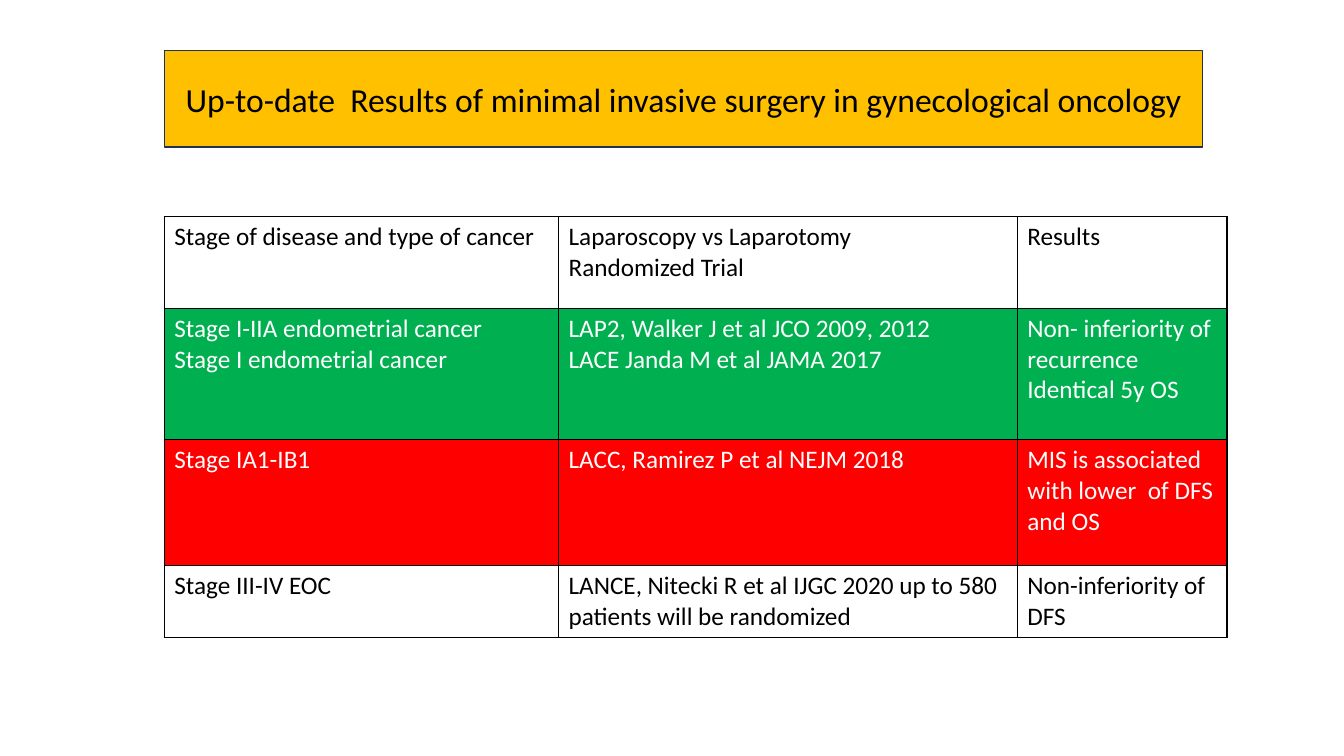
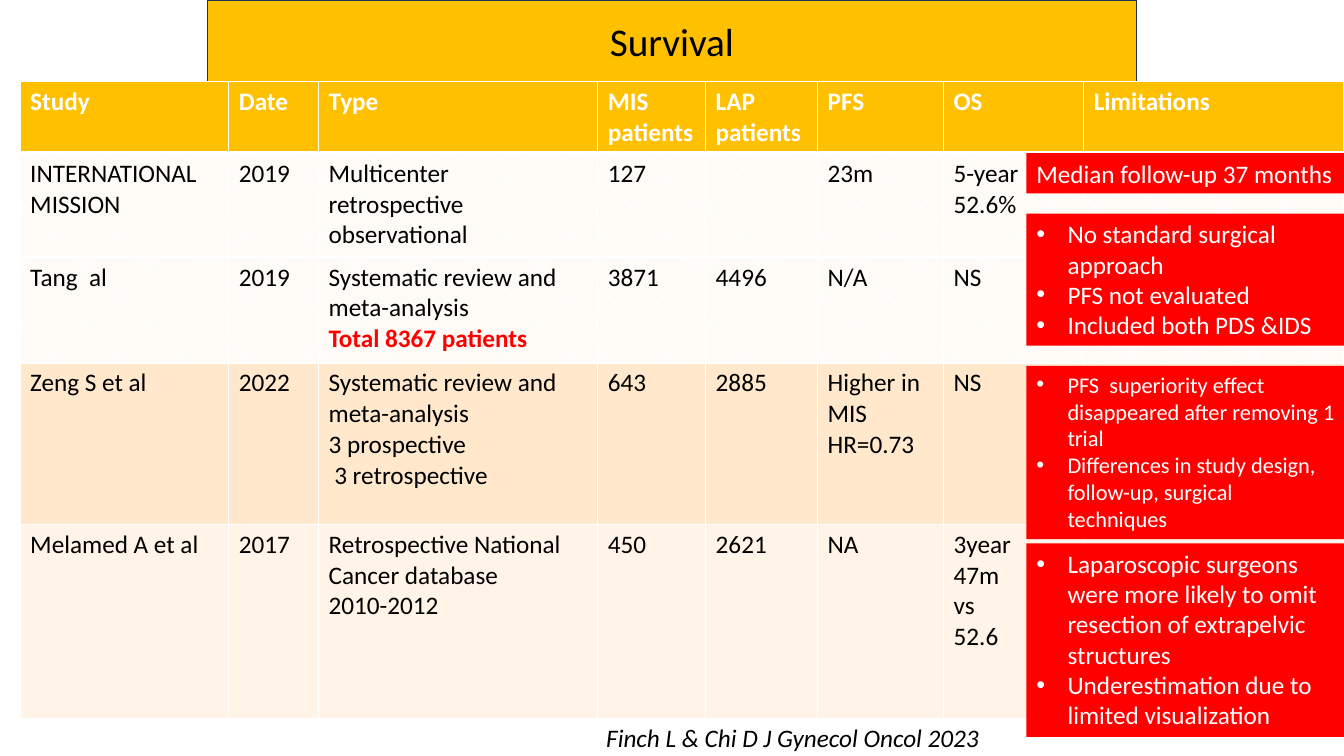
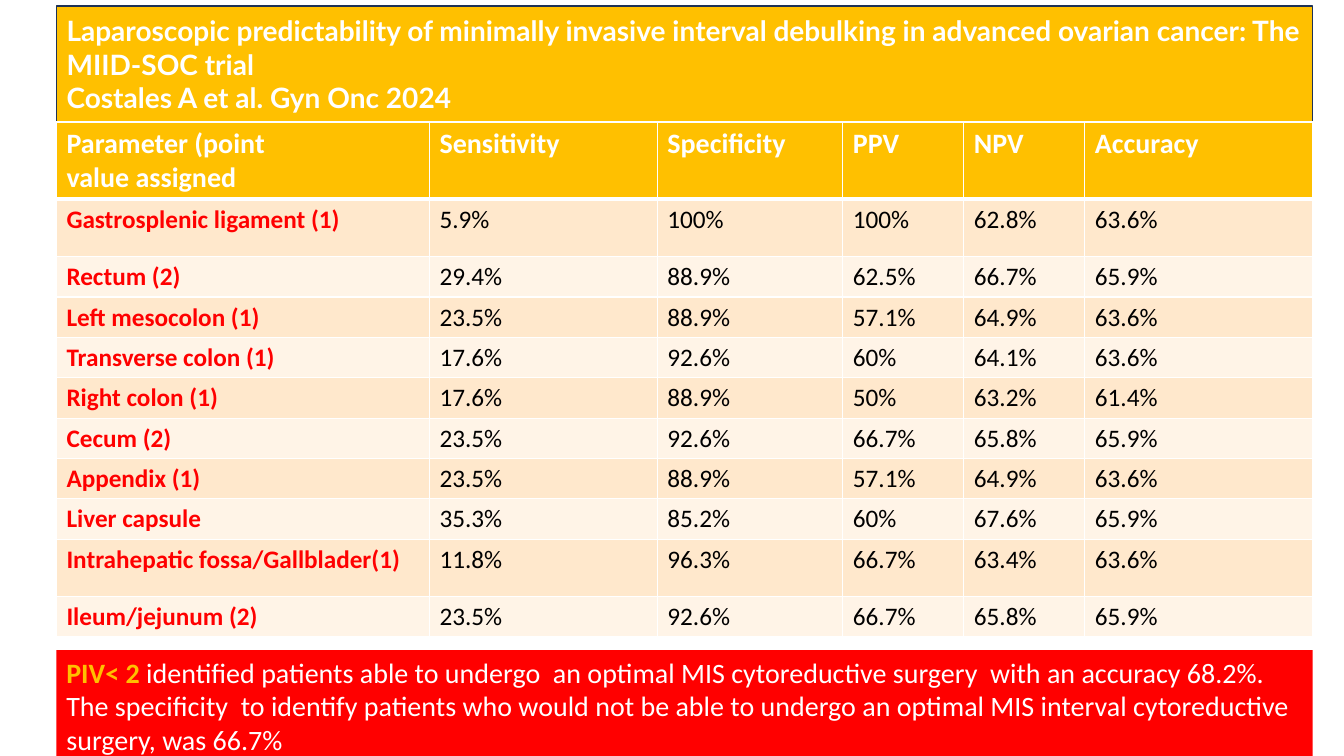
from pptx import Presentation
from pptx.dml.color import RGBColor
from pptx.enum.dml import MSO_PATTERN
from pptx.enum.text import MSO_ANCHOR, MSO_AUTO_SIZE, PP_ALIGN
from pptx.oxml.ns import qn
from pptx.util import Inches, Pt
from lxml import etree

LEFT, CENTER, RIGHT = PP_ALIGN.LEFT, PP_ALIGN.CENTER, PP_ALIGN.RIGHT
MIDDLE = MSO_ANCHOR.MIDDLE
NO_AUTOFIT = MSO_AUTO_SIZE.NONE
CHECKER = MSO_PATTERN.SMALL_CHECKER_BOARD
TITLE_ONLY = 5
FONT = "Calibri"
COLORS = {
    "black": "000000",
    "white": "FFFFFF",
    "gold": "FFC000",
    "navy": "1E3256",
    "red": "FF0000",
    "green": "00B050",
    "peach": "FFE8CC",
    "cream": "FFF4E7",
}

TRIALS = [
    ["Stage of disease and type of cancer", "Laparoscopy vs Laparotomy\nRandomized Trial", "Results"],
    ["Stage I-IIA endometrial cancer\nStage I endometrial cancer",
     "LAP2, Walker J et al JCO 2009, 2012\nLACE Janda M et al JAMA 2017",
     "Non- inferiority of recurrence\nIdentical 5y OS"],
    ["Stage IA1-IB1", "LACC, Ramirez P et al NEJM 2018", "MIS is associated with lower  of DFS and OS"],
    ["Stage III-IV EOC", "LANCE, Nitecki R et al IJGC 2020 up to 580 patients will be randomized",
     "Non-inferiority of DFS"],
]
STUDIES = [
    ["Study", "Date", "Type", "MIS\npatients", "LAP\npatients", "PFS", "OS", "Limitations"],
    ["INTERNATIONAL MISSION", "2019", "Multicenter retrospective observational",
     "127", "", "23m", "5-year 52.6%", ""],
    ["Tang  al", "2019", "Systematic review and meta-analysis\nTotal 8367 patients",
     "3871", "4496", "N/A", "NS", ""],
    ["Zeng S et al", "2022", "Systematic review and meta-analysis\n3 prospective\n 3 retrospective",
     "643", "2885", "Higher in MIS\nHR=0.73", "NS", ""],
    ["Melamed A et al", "2017", "Retrospective National Cancer database\n2010-2012",
     "450", "2621", "NA", "3year\n47m\nvs\n52.6", ""],
]
LIMITATIONS = [
    (1.52, 0.4, 18, False, ["Median follow-up 37 months"]),
    (2.12, 1.31, 18, True,
     ["No standard surgical approach", "PFS not evaluated", "Included both PDS &IDS"]),
    (3.63, 1.72, 16, True,
     ["PFS  superiority effect disappeared after removing 1 trial",
      "Differences in study design, follow-up, surgical techniques"]),
    (5.39, 1.92, 18, True,
     ["Laparoscopic surgeons were more likely to omit  resection of extrapelvic structures",
      "Underestimation due to limited visualization"]),
]
PARAMETERS = [
    ["Parameter (point\nvalue assigned", "Sensitivity", "Specificity", "PPV", "NPV", "Accuracy"],
    ["Gastrosplenic ligament (1)", "5.9%", "100%", "100%", "62.8%", "63.6%"],
    ["Rectum (2)", "29.4%", "88.9%", "62.5%", "66.7%", "65.9%"],
    ["Left mesocolon (1)", "23.5%", "88.9%", "57.1%", "64.9%", "63.6%"],
    ["Transverse colon (1)", "17.6%", "92.6%", "60%", "64.1%", "63.6%"],
    ["Right colon (1)", "17.6%", "88.9%", "50%", "63.2%", "61.4%"],
    ["Cecum (2)", "23.5%", "92.6%", "66.7%", "65.8%", "65.9%"],
    ["Appendix (1)", "23.5%", "88.9%", "57.1%", "64.9%", "63.6%"],
    ["Liver capsule", "35.3%", "85.2%", "60%", "67.6%", "65.9%"],
    ["Intrahepatic fossa/Gallblader(1)", "11.8%", "96.3%", "66.7%", "63.4%", "63.6%"],
    ["Ileum/jejunum (2)", "23.5%", "92.6%", "66.7%", "65.8%", "65.9%"],
]


def rgb(color):
    return RGBColor.from_string(COLORS[color])


def fill_solid(target, color):
    target.fill.solid()
    target.fill.fore_color.rgb = rgb(color)


def format_run(run, size, color, bold=False, italic=False, font=FONT):
    run.font.name = font
    run.font.size = Pt(size)
    run.font.bold = bold
    run.font.italic = italic
    run.font.color.rgb = rgb(color)


def format_text(text_frame, size, color, alignment=LEFT, **style):
    for paragraph in text_frame.paragraphs:
        paragraph.alignment = alignment
        for run in paragraph.runs:
            format_run(run, size, color, **style)


def add_title_band(slide, text, box, size, color="black", alignment=CENTER, **style):
    title = slide.shapes.title
    title.left, title.top, title.width, title.height = map(Inches, box)
    fill_solid(title, "gold")
    title.line.color.rgb = rgb("navy")
    title.line.width = Pt(1)
    text_frame = title.text_frame
    text_frame.text = text
    text_frame.word_wrap = True
    text_frame.auto_size = NO_AUTOFIT
    text_frame.vertical_anchor = MIDDLE
    format_text(text_frame, size, color, alignment, **style)


def add_bullet(paragraph):
    properties = paragraph._p.get_or_add_pPr()
    properties.set("marL", str(Inches(0.31)))
    properties.set("indent", str(-Inches(0.31)))
    etree.SubElement(properties, qn("a:buFont")).set("typeface", "Arial")
    etree.SubElement(properties, qn("a:buChar")).set("char", "•")


def add_text(slide, text, box, size, color="white", fill=None, bulleted=False, **style):
    shape = slide.shapes.add_textbox(*map(Inches, box))
    if fill:
        fill_solid(shape, fill)
    text_frame = shape.text_frame
    text_frame.word_wrap = True
    text_frame.text = text
    if bulleted:
        for paragraph in text_frame.paragraphs:
            add_bullet(paragraph)
    format_text(text_frame, size, color, **style)
    return text_frame


def set_borders(cell, color, bottom_width=1):
    properties = cell._tc.get_or_add_tcPr()
    for side, width in (("L", 1), ("R", 1), ("T", 1), ("B", bottom_width)):
        line = etree.SubElement(properties, qn("a:ln" + side))
        line.set("w", str(Pt(width)))
        solid = etree.SubElement(line, qn("a:solidFill"))
        etree.SubElement(solid, qn("a:srgbClr")).set("val", COLORS[color])


def fill_cell(cell, fill):
    if fill is None:
        cell.fill.background()
    elif fill == "checker":
        cell.fill.patterned()
        cell.fill.pattern = CHECKER
        cell.fill.fore_color.rgb = rgb("cream")
        cell.fill.back_color.rgb = rgb("white")
    else:
        fill_solid(cell, fill)


def add_table(slide, rows, position, widths, heights, fills, border, heavy_header=False):
    left, top = position
    table = slide.shapes.add_table(
        len(rows), len(widths), Inches(left), Inches(top),
        Inches(sum(widths)), Inches(sum(heights))).table
    table.horz_banding = False
    for column, width in zip(table.columns, widths):
        column.width = Inches(width)
    for row_index, (texts, height, fill) in enumerate(zip(rows, heights, fills)):
        table.rows[row_index].height = Inches(height)
        is_heavy = heavy_header and row_index == 0
        color = "white" if fill in ("gold", "green", "red") else "black"
        for column_index, text in enumerate(texts):
            cell = table.cell(row_index, column_index)
            cell.text = text
            set_borders(cell, border, 3 if is_heavy else 1)
            fill_cell(cell, fill)
            format_text(cell.text_frame, 18, color, bold=is_heavy)
    return table


def build_trials(slide):
    add_title_band(slide, "Up-to-date  Results of minimal invasive surgery in gynecological oncology",
                   (1.63, 0.5, 10.3, 0.96), 24)
    add_table(slide, TRIALS, (1.63, 2.15), [3.91, 4.55, 2.08], [0.91, 1.3, 1.25, 0.71],
              [None, "green", "red", None], "black")


def build_survival(slide):
    add_title_band(slide, "Survival", (2.06, 0, 9.21, 0.81), 28)
    table = add_table(slide, STUDIES, (0.2, 0.81),
                      [2.07, 0.89, 2.77, 1.07, 1.11, 1.25, 1.39, 2.58],
                      [0.69, 1.03, 1.05, 1.6, 1.93],
                      ["gold", "checker", "checker", "peach", "cream"], "white", True)
    total = table.cell(2, 2).text_frame.paragraphs[1].runs[0]
    format_run(total, 18, "red", bold=True)
    for top, height, size, bulleted, lines in LIMITATIONS:
        add_text(slide, "\n".join(lines), (10.18, top, 3.16, height), size,
                 fill="red", bulleted=bulleted)
    add_text(slide, "Finch L & Chi D J Gynecol Oncol 2023", (4.27, 7.12, 5.54, 0.4), 18,
             "black", alignment=RIGHT, italic=True)


def build_predictability(slide):
    left, width = 0.56, 12.46
    add_title_band(slide, "Laparoscopic predictability of minimally invasive interval debulking in "
                   "advanced ovarian cancer: The MIID-SOC trial\nCostales A et al. Gyn Onc 2024",
                   (left, 0.06, width, 1.15), 20, "white", LEFT, bold=True, font="Lato")
    conclusion = add_text(slide, "PIV< 2 ", (left, 6.45, width, 1.11), 20, "gold", "red", bold=True)
    finding = conclusion.paragraphs[0].add_run()
    finding.text = ("identified patients able to undergo  an optimal MIS cytoreductive surgery  with an "
                    "accuracy 68.2%. The specificity  to identify patients who would not be able to "
                    "undergo an optimal MIS interval cytoreductive  surgery, was 66.7%")
    format_run(finding, 20, "white")
    heights = [0.76, 0.57] + [0.4] * 7 + [0.57, 0.4]
    table = add_table(slide, PARAMETERS, (left, 1.21), [3.7, 2.26, 1.84, 1.2, 1.2, 2.26],
                      heights, ["gold"] + ["peach", "cream"] * 5, "white", True)
    for cell in table.rows[0].cells:
        format_text(cell.text_frame, 20, "white", bold=True)
    for row_index in range(1, len(PARAMETERS)):
        format_text(table.cell(row_index, 0).text_frame, 18, "red", bold=True)


def main():
    presentation = Presentation()
    presentation.slide_width = Inches(13.33)
    presentation.slide_height = Inches(7.5)
    for build in (build_trials, build_survival, build_predictability):
        build(presentation.slides.add_slide(presentation.slide_layouts[TITLE_ONLY]))
    presentation.save("out.pptx")


if __name__ == "__main__":
    main()
